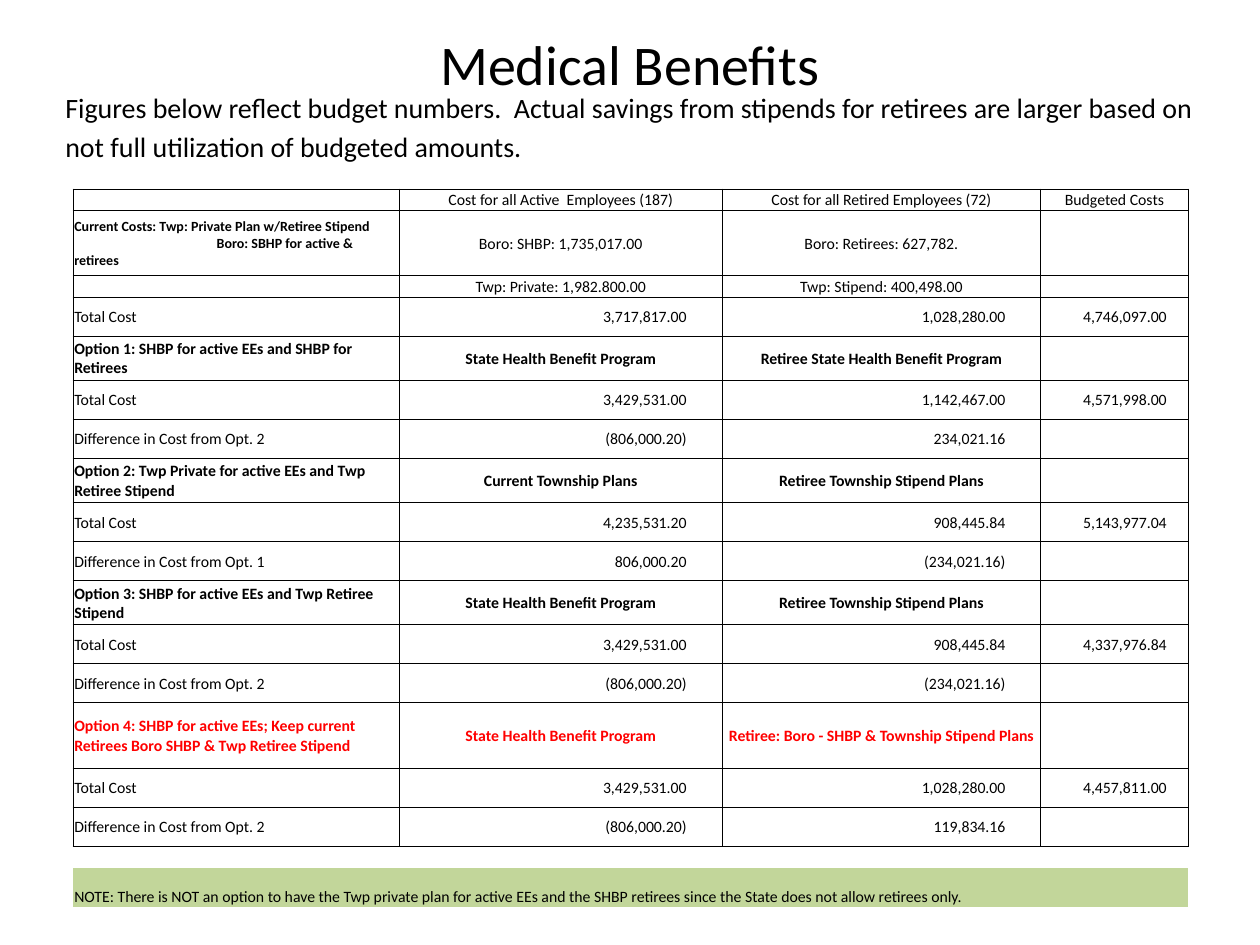
"""Build the Medical Benefits cost comparison slide."""
import pptx
import pptx.util
import pptx.dml.color
import pptx.enum.text
import pptx.oxml
import pptx.oxml.ns

Inches = pptx.util.Inches
Pt = pptx.util.Pt
ALIGN = pptx.enum.text.PP_ALIGN
ANCHOR = pptx.enum.text.MSO_ANCHOR

COLORS = {"ink": "000000", "highlight": "FF0000", "note": "C2D69A"}
FONT = "Calibri"
TITLE = "Medical Benefits"
INTRO = (
    "Figures below reflect budget numbers.  Actual savings from stipends for retirees are larger based on\n"
    "not full utilization of budgeted amounts."
)
CURRENT = "Current Costs: Twp: Private Plan w/Retiree Stipend\nBoro: SBHP for active &\nretirees"
NOTE = (
    "NOTE: There is NOT an option to have the Twp private plan for active EEs and the SHBP retirees "
    "since the State does not allow retirees only."
)

ROWS = [
    ("header", "", "Cost for all Active  Employees (187)", "Cost for all Retired Employees (72)", "Budgeted Costs"),
    ("current", CURRENT, "Boro: SHBP: 1,735,017.00", "Boro: Retirees: 627,782.", ""),
    ("header", "", "Twp: Private: 1,982.800.00", "Twp: Stipend: 400,498.00", ""),
    ("figures", "Total Cost", "3,717,817.00", "1,028,280.00", "4,746,097.00"),
    ("option", "Option 1: SHBP for active EEs and SHBP for Retirees",
     "State Health Benefit Program", "Retiree State Health Benefit Program", ""),
    ("figures", "Total Cost", "3,429,531.00", "1,142,467.00", "4,571,998.00"),
    ("figures", "Difference in Cost from Opt. 2", "(806,000.20)", "234,021.16", ""),
    ("option", "Option 2: Twp Private for active EEs and Twp Retiree Stipend",
     "Current Township Plans", "Retiree Township Stipend Plans", ""),
    ("figures", "Total Cost", "4,235,531.20", "908,445.84", "5,143,977.04"),
    ("figures", "Difference in Cost from Opt. 1", "806,000.20", "(234,021.16)", ""),
    ("option", "Option 3: SHBP for active EEs and Twp Retiree Stipend",
     "State Health Benefit Program", "Retiree Township Stipend Plans", ""),
    ("figures", "Total Cost", "3,429,531.00", "908,445.84", "4,337,976.84"),
    ("figures", "Difference in Cost from Opt. 2", "(806,000.20)", "(234,021.16)", ""),
    ("chosen", "Option 4: SHBP for active EEs; Keep current Retirees Boro SHBP & Twp Retiree Stipend",
     "State Health Benefit Program", "Retiree: Boro - SHBP & Township Stipend Plans", ""),
    ("figures", "Total Cost", "3,429,531.00", "1,028,280.00", "4,457,811.00"),
    ("figures", "Difference in Cost from Opt. 2", "(806,000.20)", "119,834.16", ""),
    ("gap", "", "", "", ""),
    ("note", NOTE, "", "", ""),
]
COLUMN_WIDTHS = [2.59, 2.56, 2.53, 1.17]
FIGURE_INSETS = [0.01, 0.28, 0.28, 0.17]
ROW_HEIGHTS = {"header": 0.17, "current": 0.52, "figures": 0.31, "option": 0.35,
               "chosen": 0.52, "gap": 0.17, "note": 0.31}


def write(frame, text, size=9, bold=False, color="ink", align=ALIGN.LEFT, space=0):
    """Fill a text frame with one formatted paragraph per line."""
    for index, line in enumerate(text.split("\n")):
        para = frame.paragraphs[0] if index == 0 else frame.add_paragraph()
        para.alignment = align
        para.space_before = Pt(space if index else 0)
        if line:
            span = para.add_run()
            span.text = line
            span.font.name = FONT
            span.font.size = Pt(size)
            span.font.bold = bold
            span.font.color.rgb = pptx.dml.color.RGBColor.from_string(COLORS[color])
        else:
            ending = pptx.oxml.parse_xml(
                f'<a:endParaRPr {pptx.oxml.ns.nsdecls("a")} sz="{size * 100}"/>')
            para._p.append(ending)


def set_borders(cell, visible):
    """Draw the named sides of a cell and hide the others."""
    paint = f'<a:solidFill><a:srgbClr val="{COLORS["ink"]}"/></a:solidFill>'
    properties = cell._tc.get_or_add_tcPr()
    for index, side in enumerate("LRTB"):
        fill = paint if side in visible else "<a:noFill/>"
        line = pptx.oxml.parse_xml(
            f'<a:ln{side} {pptx.oxml.ns.nsdecls("a")} w="{Pt(0.5)}">{fill}</a:ln{side}>')
        properties.insert(index, line)


def fill_cell(cell, kind, column, text):
    """Format one table cell by its row kind and column."""
    is_figure = kind == "figures" and column > 0
    strong = kind in ("option", "chosen") or (kind == "current" and column == 0)
    align = ALIGN.RIGHT if is_figure else ALIGN.CENTER if column else ALIGN.LEFT
    cell.margin_left = cell.margin_top = Inches(0.01)
    cell.margin_right = Inches(FIGURE_INSETS[column] if is_figure else 0.01)
    cell.margin_bottom = 0
    cell.vertical_anchor = ANCHOR.BOTTOM if kind == "note" else ANCHOR.MIDDLE
    if kind == "note":
        cell.fill.solid()
        cell.fill.fore_color.rgb = pptx.dml.color.RGBColor.from_string(COLORS["note"])
    else:
        cell.fill.background()
    write(cell.text_frame, text, size=8 if kind == "current" and column == 0 else 9, bold=strong,
          color="highlight" if kind == "chosen" else "ink", align=align)
    set_borders(cell, {"gap": "T", "note": ""}.get(kind, "LRTB"))


def add_costs(page):
    """Add the cost table."""
    heights = [ROW_HEIGHTS[row[0]] for row in ROWS]
    frame = page.shapes.add_table(len(ROWS), len(COLUMN_WIDTHS), Inches(0.58), Inches(1.5),
                                  Inches(sum(COLUMN_WIDTHS)), Inches(sum(heights)))
    table = frame.table
    table.first_row = table.horz_banding = False
    for column, width in zip(table.columns, COLUMN_WIDTHS):
        column.width = Inches(width)
    for index, (kind, *texts) in enumerate(ROWS):
        table.rows[index].height = Inches(heights[index])
        for column, text in enumerate(texts):
            fill_cell(table.cell(index, column), kind, column, text)
    boro_line = table.cell(1, 0).text_frame.paragraphs[1]
    boro_line._p.get_or_add_pPr().set("marL", str(Inches(1.13)))
    last = len(ROWS) - 1
    table.cell(last, 0).merge(table.cell(last, len(COLUMN_WIDTHS) - 1))


def main():
    """Create and save the deck."""
    deck = pptx.Presentation()
    deck.slide_width, deck.slide_height = Inches(10), Inches(7.5)
    page = deck.slides.add_slide(deck.slide_layouts[5])
    title = page.shapes.title
    title.left, title.top, title.width, title.height = Inches(0.5), 0, Inches(9), Inches(1)
    title.text_frame.vertical_anchor = ANCHOR.MIDDLE
    write(title.text_frame, TITLE, size=32, align=ALIGN.CENTER)
    box = page.shapes.add_textbox(Inches(0.42), Inches(0.67), Inches(9.58), Inches(6.2))
    box.text_frame.word_wrap = True
    write(box.text_frame, INTRO, size=16, space=3.2)
    add_costs(page)
    deck.save("out.pptx")


if __name__ == "__main__":
    main()
